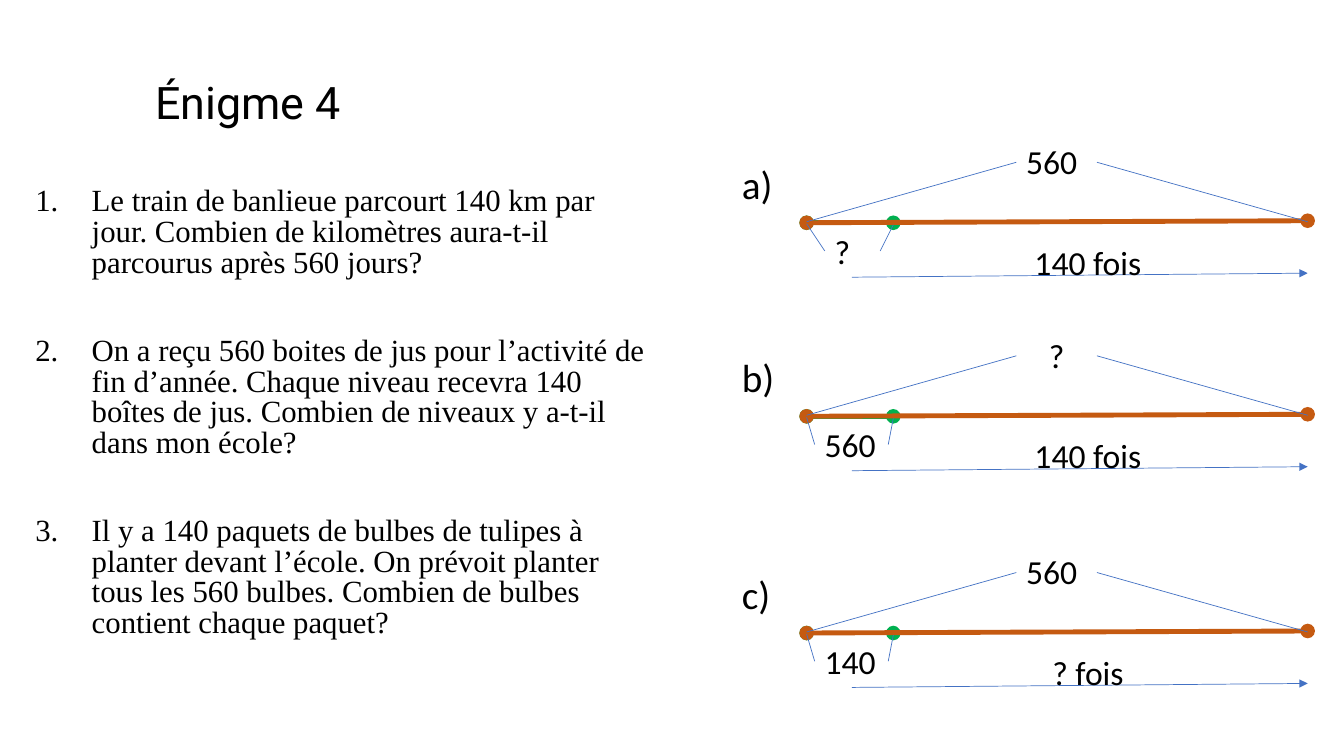
from lxml import etree
from pptx import Presentation
from pptx import util as u
from pptx.dml.color import RGBColor
from pptx.enum import shapes, text
from pptx.oxml.ns import qn

PX = 9144
HUES = {"ink": "000000", "part": "00B050", "whole": "C55A11", "guide": "4472C4"}


def style(frame, font, size, align=text.PP_ALIGN.LEFT):
    frame.word_wrap = True
    frame.auto_size = text.MSO_AUTO_SIZE.NONE
    frame.vertical_anchor = text.MSO_ANCHOR.TOP
    for para in frame.paragraphs:
        para.alignment = align
        for run in para.runs:
            run.font.name = font
            run.font.size = u.Pt(size)
            run.font.color.rgb = RGBColor.from_string(HUES["ink"])


def draw(ends, hue, width, head=None, tail=None):
    line = slide.shapes.add_connector(
        shapes.MSO_CONNECTOR.STRAIGHT, *[n * PX for n in ends])
    line.line.color.rgb = RGBColor.from_string(HUES[hue])
    line.line.width = u.Pt(width)
    props = line.line._get_or_add_ln()
    for tag, kind in (("a:headEnd", head), ("a:tailEnd", tail)):
        if kind:
            etree.SubElement(props, qn(tag), type=kind)
    etree.SubElement(line._element.spPr, qn("a:effectLst"))


deck = Presentation()
deck.slide_width, deck.slide_height = 1333 * PX, 750 * PX
slide = deck.slides.add_slide(deck.slide_layouts[1])
title, body = slide.placeholders

title.left, title.top, title.width, title.height = [n * PX for n in (144, 69, 232, 64)]
title.text_frame.text = "Énigme 4"
style(title.text_frame, "Roboto", 32)

tasks = [
    "Le train de banlieue parcourt 140 km par jour. Combien de kilomètres "
    "aura-t-il parcourus après 560 jours?",
    "On a reçu 560 boites de jus pour l’activité de fin d’année. Chaque niveau "
    "recevra 140 boîtes de jus. Combien de niveaux y a-t-il dans mon école?",
    "Il y a 140 paquets de bulbes de tulipes à planter devant l’école. On prévoit "
    "planter tous les 560 bulbes. Combien de bulbes contient chaque paquet?",
]
body.left, body.top, body.width, body.height = [n * PX for n in (25, 181, 627, 557)]
body.text_frame.text = "\n".join(tasks)
style(body.text_frame, "Times New Roman", 22)
for i, para in enumerate(body.text_frame.paragraphs):
    para.line_spacing = 0.83
    para.space_before = u.Pt(41 if i else 10)
    props = para._p.get_or_add_pPr()
    props.set("marL", str(56 * PX))
    props.set("indent", str(-56 * PX))
    etree.SubElement(props, qn("a:buFont"), typeface="+mj-lt")
    etree.SubElement(props, qn("a:buAutoNum"), type="arabicPeriod")

LEFT, MID, RIGHT = 800, 886, 1297
rows = [
    ("a)", 221, "560", "?", 818, 873, "140 fois"),
    ("b)", 413, "?", "560", 808, 881, "140 fois"),
    ("c)", 628, "560", "140", 808, 881, "? fois"),
]
for mark, y, total, part, near, far, times in rows:
    draw((LEFT, y, MID, y), "part", 3.5, "oval", "oval")
    draw((LEFT, y, RIGHT, y - 2), "whole", 3.5, "oval", "oval")
    draw((LEFT, y - 1, 1008, y - 60), "guide", 0.5)
    draw((RIGHT, y - 1, 1088, y - 60), "guide", 0.5)
    draw((LEFT, y + 1, near, y + 28), "guide", 0.5)
    draw((MID, y + 2, far, y + 28), "guide", 0.5)
    draw((845, y + 54, RIGHT, y + 50), "guide", 0.5, tail="triangle")
    mid = text.PP_ALIGN.CENTER
    side = text.PP_ALIGN.LEFT
    labels = [
        (mark, 726, y - 67, 68, 57, 28, side),
        (total, 1008, y - 86, 80, 50, 24, mid if total == "?" else side),
        (part, near, y + 3, far - near, 50, 24, side),
        (times, 1015, y + 14, 128, 50, 24, mid),
    ]
    for words, x, top, wide, high, size, align in labels:
        box = slide.shapes.add_textbox(*[n * PX for n in (x, top, wide, high)])
        box.text_frame.text = words
        style(box.text_frame, "Calibri", size, align)

deck.save("out.pptx")
